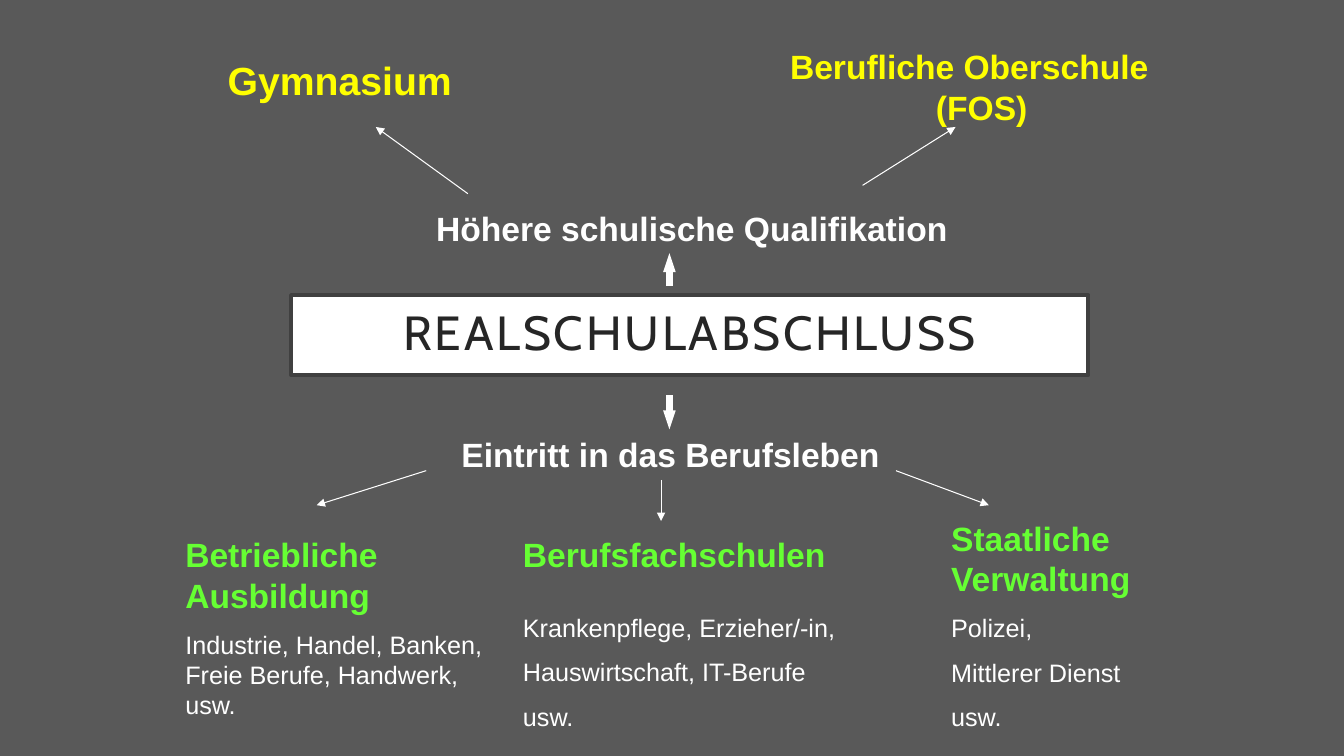
from lxml import etree
from pptx import Presentation
from pptx.dml.color import RGBColor
from pptx.enum.shapes import MSO_CONNECTOR as Link, MSO_SHAPE as Shape
from pptx.enum.text import MSO_ANCHOR as Anchor, PP_ALIGN as Align
from pptx.oxml.ns import qn
from pptx.util import Cm, Pt

GREY = RGBColor(0x59, 0x59, 0x59)
EDGE = RGBColor(0x40, 0x40, 0x40)
INK = RGBColor(0x26, 0x26, 0x26)
WHITE = RGBColor(0xFF, 0xFF, 0xFF)
YELLOW = RGBColor(0xFF, 0xFF, 0x00)
GREEN = RGBColor(0x66, 0xFF, 0x33)


class Chart:
    """Draws the paths that follow the school certificate."""

    font = "Arial"
    gap = 10

    def __init__(self, deck):
        self.slide = deck.slides.add_slide(deck.slide_layouts[6])
        fill = self.slide.background.fill
        fill.solid()
        fill.fore_color.rgb = GREY

    def run(self, para, text, size, color, bold=False, font=None):
        run = para.add_run()
        run.text = text
        run.font.name = font or self.font
        run.font.size = Pt(size)
        run.font.bold = bold
        run.font.color.rgb = color
        return run

    def text(self, x, y, w, h):
        box = self.slide.shapes.add_textbox(Cm(x), Cm(y), Cm(w), Cm(h))
        box.text_frame.word_wrap = True
        return box.text_frame

    def head(self, x, y, w, h, text, color=WHITE, size=24):
        frame = self.text(x, y, w, h)
        self.run(frame.paragraphs[0], text, size, color, True)
        return frame

    def branch(self, x, y, w, h, title, lines, first=None):
        frame = self.head(x, y, w, h, title, GREEN)
        for i, line in enumerate(lines):
            para = frame.add_paragraph()
            para.space_before = Pt(first if first and i == 0 else self.gap)
            self.run(para, line, 18, WHITE)

    def title(self, x, y, w, h, text):
        box = self.slide.shapes.add_shape(
            Shape.RECTANGLE, Cm(x), Cm(y), Cm(w), Cm(h))
        box.shadow.inherit = False
        box.fill.solid()
        box.fill.fore_color.rgb = WHITE
        box.line.color.rgb = EDGE
        box.line.width = Pt(3)
        frame = box.text_frame
        frame.word_wrap = True
        frame.vertical_anchor = Anchor.MIDDLE
        frame.margin_left = frame.margin_right = Cm(0.76)
        frame.margin_top = frame.margin_bottom = Cm(0.5)
        para = frame.paragraphs[0]
        para.alignment = Align.CENTER
        para.line_spacing = 0.9
        run = self.run(para, text, 34.2, INK, font="Cabin")
        run._r.get_or_add_rPr().set("spc", "200")

    def arrow(self, x1, y1, x2, y2, width=0.75, tip="med"):
        link = self.slide.shapes.add_connector(
            Link.STRAIGHT, Cm(x1), Cm(y1), Cm(x2), Cm(y2))
        link.line.color.rgb = WHITE
        link.line.width = Pt(width)
        etree.SubElement(link.line._get_or_add_ln(), qn("a:tailEnd"),
                         type="triangle", w=tip, len="med")
        etree.SubElement(link._element.spPr, qn("a:effectLst"))


def main():
    deck = Presentation()
    deck.slide_width, deck.slide_height = Cm(33.87), Cm(19.05)
    chart = Chart(deck)

    chart.title(7.34, 7.44, 20.09, 2.01, "REALSCHULABSCHLUSS")
    chart.head(5.49, 1.3, 7.01, 2.34, "Gymnasium", YELLOW, 28)
    frame = chart.head(19.66, 1.04, 10.16, 2.2, "Berufliche Oberschule", YELLOW)
    para = frame.add_paragraph()
    para.alignment = Align.CENTER
    chart.run(para, "(FOS)", 24, YELLOW, True)
    chart.head(10.74, 5.11, 13.77, 1.27, "Höhere schulische Qualifikation")
    chart.head(11.38, 10.82, 13.77, 1.27, "Eintritt in das Berufsleben")

    chart.branch(4.42, 13.34, 8.05, 4.95, "Betriebliche Ausbildung",
                 ["Industrie, Handel, Banken, Freie Berufe, Handwerk, usw."])
    chart.branch(12.93, 13.34, 9.09, 5.33, "Berufsfachschulen",
                 ["Krankenpflege, Erzieher/-in,", "Hauswirtschaft, IT-Berufe",
                  "usw."], 27)
    chart.branch(23.72, 12.93, 5.08, 5.72, "Staatliche Verwaltung",
                 ["Polizei,", "Mittlerer Dienst", "usw."])

    for start, end in ((7.21, 6.38), (9.96, 10.82)):
        chart.arrow(16.87, start, 16.87, end, 4.5, "sm")
    for ends in ((11.79, 4.88, 9.47, 3.2), (21.74, 4.67, 24.08, 3.2),
                 (10.74, 11.86, 7.98, 12.73), (16.66, 12.09, 16.66, 13.13),
                 (22.58, 11.86, 24.92, 12.73)):
        chart.arrow(*ends)

    deck.save("out.pptx")


if __name__ == "__main__":
    main()
